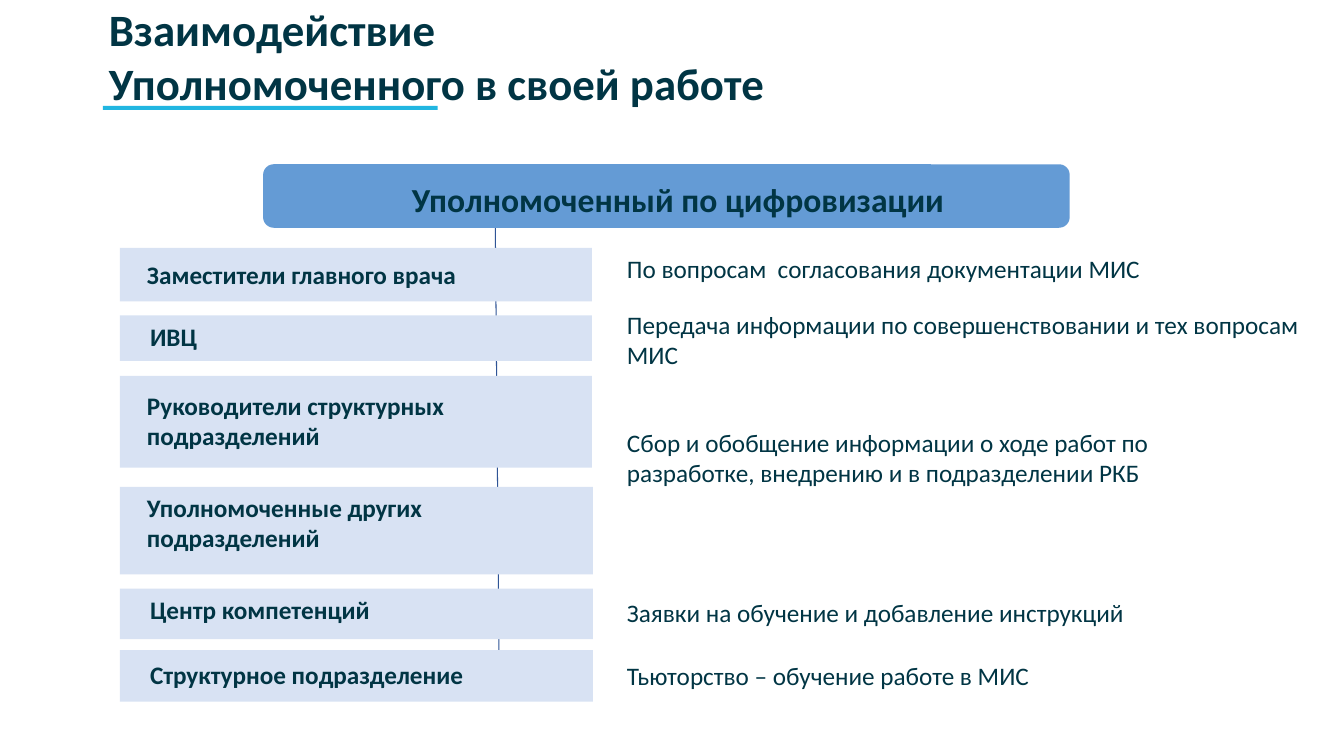
from pptx import Presentation
from pptx.dml.color import RGBColor
from pptx.enum.shapes import MSO_CONNECTOR, MSO_SHAPE
from pptx.enum.text import MSO_ANCHOR, MSO_AUTO_SIZE, PP_ALIGN
from pptx.oxml.ns import qn
from pptx.util import Inches, Pt
from lxml import etree

COLORS = {"text": "013544", "header": "649BD5", "box": "D8E2F3",
          "line": "2F5496", "accent": "21B6E1"}
FONT = "Calibri"

TITLE = ["Взаимодействие", "Уполномоченного в своей работе"]
HEADER = "Уполномоченный по цифровизации"

# Partners: box top, width, height; label, left, top, width, height
PARTNERS = [
    ((2.46, 4.68, 0.53), "Заместители главного врача", (1.36, 2.52, 4.26, 0.4)),
    ((3.13, 4.68, 0.45), "ИВЦ", (1.39, 3.14, 1.22, 0.4)),
    ((3.73, 4.68, 0.91), "Руководители структурных подразделений", (1.36, 3.82, 4.5, 0.71)),
    ((4.83, 4.69, 0.87), "Уполномоченные других подразделений", (1.36, 4.83, 4.54, 0.71)),
    ((5.84, 4.69, 0.5), "Центр компетенций", (1.39, 5.85, 4.56, 0.4)),
    ((6.45, 4.69, 0.51), "Структурное подразделение", (1.39, 6.49, 4.38, 0.4)),
]
# Topics: text, top, width, height
TOPICS = [
    ("По вопросам  согласования документации МИС", 2.46, 6.68, 0.4),
    ("Передача информации по совершенствовании и тех вопросам МИС", 3.02, 6.9, 0.71),
    ("Сбор и обобщение информации о ходе работ по разработке, внедрению "
     "и в подразделении РКБ", 4.19, 5.85, 1.01),
    ("Заявки на обучение и добавление инструкций", 5.88, 6.64, 0.4),
    ("Тьюторство – обучение работе в МИС", 6.5, 5.79, 0.4),
]
BOX_LEFT = 1.19
TOPIC_LEFT = 6.12


def color(name):
    return RGBColor.from_string(COLORS[name])


def write(shape, lines, size, bold=False, align=PP_ALIGN.LEFT):
    frame = shape.text_frame
    frame.word_wrap = True
    frame.auto_size = MSO_AUTO_SIZE.NONE
    frame.vertical_anchor = MSO_ANCHOR.TOP
    for index, line in enumerate(lines):
        paragraph = frame.add_paragraph() if index else frame.paragraphs[0]
        paragraph.alignment = align
        run = paragraph.add_run()
        run.text = line
        run.font.name = FONT
        run.font.size = Pt(size)
        run.font.bold = bold
        run.font.color.rgb = color("text")


def add_text(slide, place, text, size=18, **style):
    shape = slide.shapes.add_textbox(*map(Inches, place))
    write(shape, [text], size, **style)


def add_block(slide, place, fill, kind=MSO_SHAPE.RECTANGLE):
    shape = slide.shapes.add_shape(kind, *map(Inches, place))
    shape.shadow.inherit = False
    shape.fill.solid()
    shape.fill.fore_color.rgb = color(fill)
    shape.line.fill.background()


def main():
    presentation = Presentation()
    presentation.slide_width = Inches(13.33)
    presentation.slide_height = Inches(7.5)
    slide = presentation.slides.add_slide(presentation.slide_layouts[5])

    # Title and its underline
    title = slide.shapes.title
    title.left, title.top, title.width, title.height = map(Inches, (0.98, -0.03, 9.58, 1.18))
    write(title, TITLE, 32, bold=True)
    add_block(slide, (1.02, 1.05, 3.32, 0.04), "accent")

    # Linking line behind the boxes
    link = slide.shapes.add_connector(
        MSO_CONNECTOR.STRAIGHT, *map(Inches, (4.91, 1.94, 4.95, 6.57)))
    link.line.color.rgb = color("line")
    link.line.width = Pt(0.75)
    etree.SubElement(link._element.spPr, qn("a:effectLst"))

    # Header
    add_block(slide, (2.61, 1.63, 8, 0.63), "header", MSO_SHAPE.ROUNDED_RECTANGLE)
    add_text(slide, (2.84, 1.73, 7.77, 0.5), HEADER, 24, bold=True, align=PP_ALIGN.CENTER)

    # Partners on the left
    for box, label, place in PARTNERS:
        add_block(slide, (BOX_LEFT, *box), "box")
        add_text(slide, place, label, bold=True)

    # Topics on the right
    for text, *place in TOPICS:
        add_text(slide, (TOPIC_LEFT, *place), text)

    presentation.save("out.pptx")


if __name__ == "__main__":
    main()
